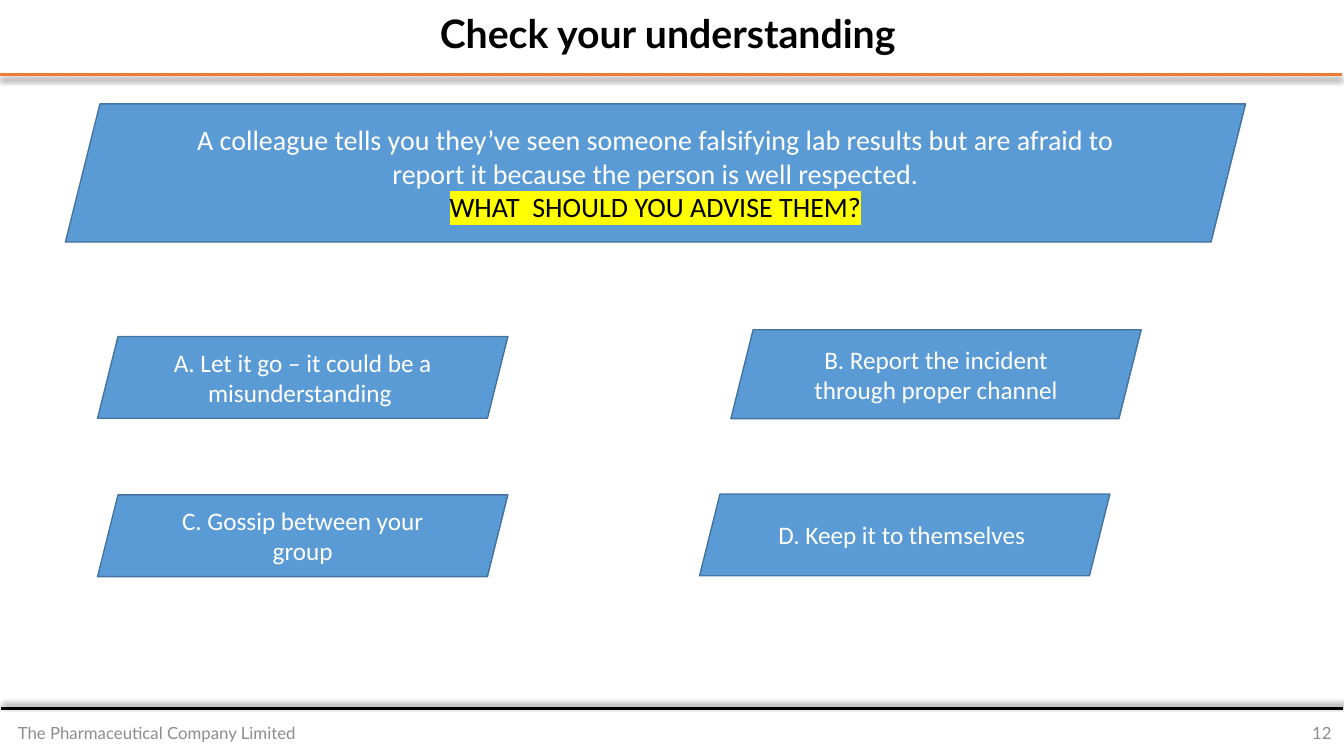
"""Build the "Check your understanding" quiz slide."""
from dataclasses import dataclass

from lxml.etree import SubElement
from pptx import Presentation
from pptx.dml.color import RGBColor
from pptx.enum.shapes import MSO_CONNECTOR, MSO_SHAPE
from pptx.enum.text import MSO_ANCHOR, PP_ALIGN
from pptx.oxml import parse_xml
from pptx.oxml.ns import nsdecls, qn
from pptx.util import Cm, Pt


@dataclass(frozen=True)
class Theme:
    heading_font: str = "Lato"
    body_font: str = "Calibri"
    title_size: int = 28
    question_size: int = 20
    answer_size: int = 18
    footer_size: int = 12
    dark: str = "000000"
    light: str = "FFFFFF"
    muted: str = "8C8C8C"
    accent: str = "ED7D31"
    card: str = "5B9BD5"
    card_edge: str = "43739E"
    marker: str = "FFFF00"


THEME = Theme()
SLIDE_WIDTH, SLIDE_HEIGHT = 33.87, 19.05
RULE_LENGTH = 33.81
FOOTER_TOP, FOOTER_HEIGHT = 17.96, 1.02
ANSWER_WIDTH = 10.34

TITLE = ("Check your understanding ", (10.29, 0.18, 13.31, 1.45))
RULES = [
    (0, 1.88, THEME.accent, 90),
    (0.03, 17.86, THEME.dark, 270),
]
FOOTERS = [
    ("The Pharmaceutical Company Limited", 0.03, 7.85, PP_ALIGN.CENTER),
    ("12", 26.19, 7.62, PP_ALIGN.RIGHT),
]
SITUATION = (
    "A colleague tells you they’ve seen someone falsifying lab results "
    "but are afraid to report it because the person is well respected."
)
PROMPT = "WHAT  SHOULD YOU ADVISE THEM?"
QUESTION_BOX = (1.65, 2.62, 29.74, 3.48)
ANSWERS = [
    ("A. Let it go – it could be a misunderstanding ", 2.46, 8.48, 2.06),
    ("B. Report the incident through proper channel", 18.42, 8.31, 2.24),
    ("C. Gossip between your group", 2.46, 12.47, 2.06),
    ("D. Keep it to themselves ", 17.63, 12.45, 2.06),
]


def add_rule(slide, left, top, color, shadow_angle):
    rule = slide.shapes.add_connector(
        MSO_CONNECTOR.STRAIGHT, Cm(left), Cm(top), Cm(left + RULE_LENGTH), Cm(top)
    )
    rule.line.color.rgb = RGBColor.from_string(color)
    rule.line.width = Pt(2.25)
    rule._element.spPr.append(parse_xml(
        f'<a:effectLst {nsdecls("a")}>'
        f'<a:outerShdw blurRad="{Pt(4)}" dist="{Pt(3)}" dir="{shadow_angle * 60000}" '
        f'algn="t" rotWithShape="0"><a:srgbClr val="{THEME.dark}">'
        '<a:alpha val="40000"/></a:srgbClr></a:outerShdw></a:effectLst>'
    ))


def write(paragraph, text, font, size, color, align=PP_ALIGN.CENTER, bold=False):
    paragraph.alignment = align
    run = paragraph.add_run()
    run.text = text
    run.font.name = font
    run.font.size = Pt(size)
    run.font.bold = bold
    run.font.color.rgb = RGBColor.from_string(color)
    return run


def highlight(run, color):
    marker = run.font._element.makeelement(qn("a:highlight"))
    SubElement(marker, qn("a:srgbClr"), val=color)
    run.font._element.find(qn("a:solidFill")).addnext(marker)


def prepare(frame):
    frame.word_wrap = True
    frame.vertical_anchor = MSO_ANCHOR.MIDDLE
    return frame


def add_label(slide, box):
    return prepare(slide.shapes.add_textbox(*map(Cm, box)).text_frame)


def add_card(slide, box):
    card = slide.shapes.add_shape(MSO_SHAPE.PARALLELOGRAM, *map(Cm, box))
    card.shadow.inherit = False
    card.fill.solid()
    card.fill.fore_color.rgb = RGBColor.from_string(THEME.card)
    card.line.color.rgb = RGBColor.from_string(THEME.card_edge)
    card.line.width = Pt(1)
    return prepare(card.text_frame)


def main():
    deck = Presentation()
    deck.slide_width, deck.slide_height = Cm(SLIDE_WIDTH), Cm(SLIDE_HEIGHT)
    slide = deck.slides.add_slide(deck.slide_layouts[6])

    for rule in RULES:
        add_rule(slide, *rule)

    title_text, title_box = TITLE
    title = add_label(slide, title_box).paragraphs[0]
    title.line_spacing = 0.9
    write(title, title_text, THEME.heading_font, THEME.title_size, THEME.dark, bold=True)

    for text, left, width, align in FOOTERS:
        footer = add_label(slide, (left, FOOTER_TOP, width, FOOTER_HEIGHT))
        write(footer.paragraphs[0], text, THEME.heading_font, THEME.footer_size,
              THEME.muted, align)

    question = add_card(slide, QUESTION_BOX)
    write(question.paragraphs[0], SITUATION, THEME.body_font, THEME.question_size, THEME.light)
    prompt = write(question.add_paragraph(), PROMPT, THEME.body_font,
                   THEME.question_size, THEME.dark)
    highlight(prompt, THEME.marker)

    for text, left, top, height in ANSWERS:
        answer = add_card(slide, (left, top, ANSWER_WIDTH, height))
        write(answer.paragraphs[0], text, THEME.body_font, THEME.answer_size, THEME.light)

    deck.save("out.pptx")


if __name__ == "__main__":
    main()
